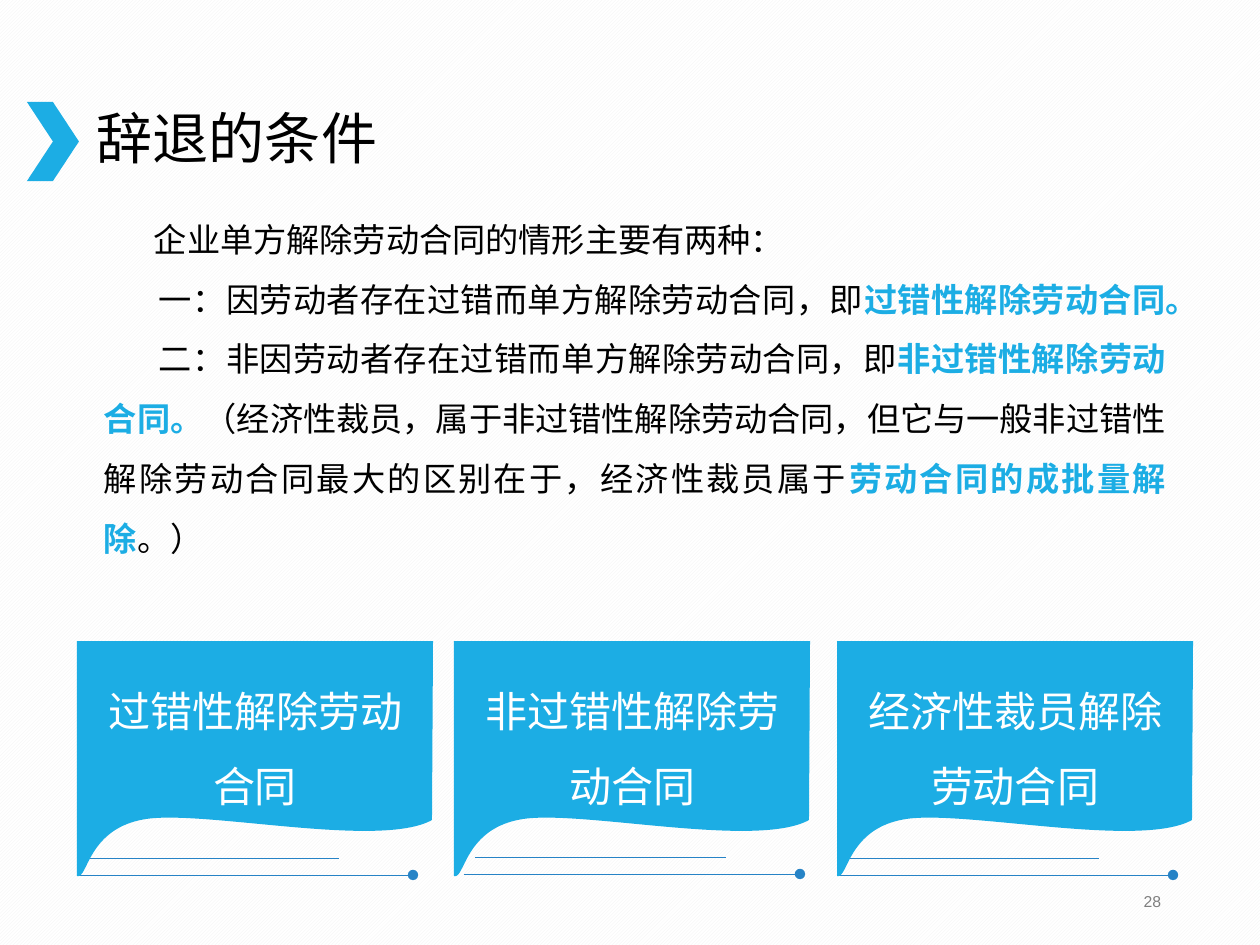
from lxml.etree import SubElement
from pptx import Presentation
from pptx.dml.color import RGBColor
from pptx.enum.dml import MSO_PATTERN
from pptx.enum.shapes import MSO_CONNECTOR, MSO_SHAPE
from pptx.enum.text import MSO_ANCHOR, PP_ALIGN
from pptx.oxml.ns import qn
from pptx.util import Pt

HEX = {"blue": "1CADE4", "line": "2683C6", "ink": "000000", "white": "FFFFFF",
       "grey": "7F7F7F", "stripe": "F2F2F2"}
SCALE = 914400 / 126

# First-line indent, then (text, stressed) runs
BODY = [
    (50, [("企业单方解除劳动合同的情形主要有两种：", False)]),
    (55, [("一：因劳动者存在过错而单方解除劳动合同，即", False),
          ("过错性解除劳动合同。", True)]),
    (55, [("二：非因劳动者存在过错而单方解除劳动合同，即", False),
          ("非过错性解除劳动合同。", True),
          ("（经济性裁员，属于非过错性解除劳动合同，但它与一般非过错性"
           "解除劳动合同最大的区别在于，经济性裁员属于", False),
          ("劳动合同的成批量解除", True),
          ("。）", False)]),
]
# Left edge, shift of the rules, label
CARDS = [
    (77, (0, 0), "过错性解除劳动合同"),
    (454, (10, -1), "非过错性解除劳动合同"),
    (837, (0, 0), "经济性裁员解除劳动合同"),
]


def px(n):
    return round(n * SCALE)


def rgb(name):
    return RGBColor.from_string(HEX[name])


def set_frame(frame, sides, anchor):
    frame.word_wrap = True
    frame.vertical_anchor = anchor
    frame.margin_left, frame.margin_top, frame.margin_right, frame.margin_bottom = map(px, sides)


def style(para, size, color, align, spacing):
    font = para.font
    font.name, font.size = "Arial", Pt(size)
    font.color.rgb = rgb(color)
    para.alignment, para.line_spacing = align, spacing


def add_text(slide, box, sides, anchor):
    frame = slide.shapes.add_textbox(*map(px, box)).text_frame
    set_frame(frame, sides, anchor)
    return frame


def paint(shape):
    shape.shadow.inherit = False
    shape.fill.solid()
    shape.fill.fore_color.rgb = rgb("blue")
    shape.line.fill.background()


def add_title(slide, x, y, w, h):
    # Chevron mark and heading
    paint(slide.shapes.add_shape(MSO_SHAPE.CHEVRON, px(x - 60), px(y + 52), px(52), px(79)))
    frame = add_text(slide, (x, y, w, h), (10, 5, 10, 5), MSO_ANCHOR.MIDDLE)
    para = frame.paragraphs[0]
    para.text = "辞退的条件"
    style(para, 32, "ink", PP_ALIGN.LEFT, 0.9)


def add_body(slide, x, y, w, h):
    frame = add_text(slide, (x, y, w, h), (12, 6, 12, 6), MSO_ANCHOR.TOP)
    for i, (indent, runs) in enumerate(BODY):
        para = frame.add_paragraph() if i else frame.paragraphs[0]
        style(para, 19, "ink", PP_ALIGN.JUSTIFY, 1.5)
        para._p.get_or_add_pPr().set("indent", str(px(indent)))
        for text, stressed in runs:
            run = para.add_run()
            run.text = text
            if stressed:
                run.font.bold = True
                run.font.color.rgb = rgb("blue")


def add_rule(slide, x, y, w, dot=False):
    rule = slide.shapes.add_connector(MSO_CONNECTOR.STRAIGHT, px(x), px(y), px(x + w), px(y))
    rule.line.color.rgb = rgb("line")
    rule.line.width = Pt(0.5)
    if dot:
        SubElement(rule.line._get_or_add_ln(), qn("a:tailEnd"), type="oval")
    SubElement(rule._element.spPr, qn("a:effectLst"))


def bend(line, *controls):
    """Turn a straight segment into a cubic curve with the same end."""
    line.tag = qn("a:cubicBezTo")
    for i, (x, y) in enumerate(controls):
        point = SubElement(line, qn("a:pt"), x=str(px(x)), y=str(px(y)))
        line.insert(i, point)


def add_card(slide, x, y, w, h, shift, label):
    # Two rules under the flag
    dx, dy = shift
    add_rule(slide, x + dx + 11, y + h - 18 + dy, 251)
    add_rule(slide, x + dx, y + h - 1 + dy, 336, dot=True)
    # Flag with a waved lower edge
    points = [(w, 0), (w - 1, 179), (69, 178), (0, h)]
    pen = slide.shapes.build_freeform(0, 0)
    pen.add_line_segments([(px(a), px(b)) for a, b in points], close=True)
    flag = pen.convert_to_shape(px(x), px(y))
    lines = list(flag._element.iter(qn("a:lnTo")))
    bend(lines[2], (303, 208), (129, 169))
    bend(lines[3], (10, 187), (11, 239))
    paint(flag)
    set_frame(flag.text_frame, (13, 6, 13, 52), MSO_ANCHOR.MIDDLE)
    para = flag.text_frame.paragraphs[0]
    para.text = label
    style(para, 24, "white", PP_ALIGN.CENTER, 1.5)


def add_number(slide, x, y, w, h):
    frame = add_text(slide, (x, y, w, h), (13, 6, 13, 6), MSO_ANCHOR.MIDDLE)
    para = frame.paragraphs[0]
    para.text = "28"
    style(para, 9, "grey", PP_ALIGN.RIGHT, 1.0)


def main():
    deck = Presentation()
    deck.slide_width, deck.slide_height = px(1260), px(945)
    slide = deck.slides.add_slide(deck.slide_layouts[6])
    # Striped background
    fill = slide.background.fill
    fill.patterned()
    fill.pattern = MSO_PATTERN.LIGHT_UPWARD_DIAGONAL
    fill.fore_color.rgb, fill.back_color.rgb = rgb("stripe"), rgb("white")

    add_title(slide, 87, 50, 1086, 183)
    add_body(slide, 92, 193, 1086, 449)
    for left, shift, label in CARDS:
        add_card(slide, left, 641, 356, 235, shift, label)
    add_number(slide, 890, 876, 284, 50)
    deck.save("out.pptx")


if __name__ == "__main__":
    main()
